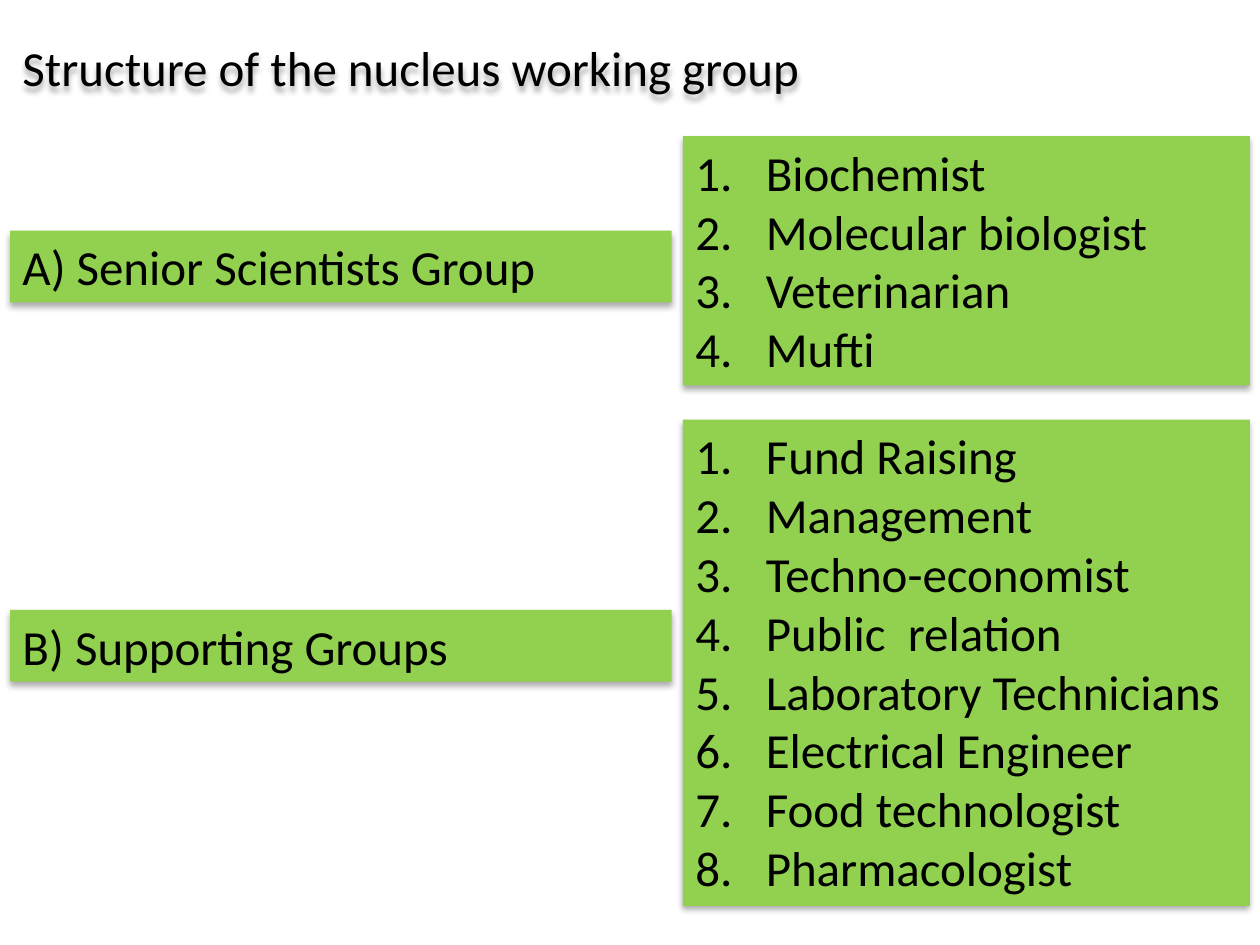
"""Build the slide on the structure of the nucleus working group."""
from lxml import etree
from pptx import Presentation
from pptx import util as u
from pptx.dml.color import RGBColor
from pptx.enum import shapes, text
from pptx.oxml.ns import qn

TITLE = "Structure of the nucleus working group"
GROUPS = [
    {
        "label": "A) Senior Scientists Group",
        "label_top": 1.83,
        "list_top": 1.08,
        "members": ["Biochemist", "Molecular biologist", "Veterinarian", "Mufti"],
    },
    {
        "label": "B) Supporting Groups",
        "label_top": 4.84,
        "list_top": 3.33,
        "members": [
            "Fund Raising", "Management", "Techno-economist", "Public  relation",
            "Laboratory Technicians", "Electrical Engineer", "Food technologist",
            "Pharmacologist",
        ],
    },
]

THEME = {
    "panel": RGBColor.from_string("92D050"),
    "font": {"name": "Calibri", "size": u.Pt(28)},
    "ink": RGBColor.from_string("000000"),
    "shadow": {"blurRad": u.Pt(3.5), "dist": u.Pt(2.2), "dir": 90 * 60000,
               "algn": "tl", "rotWithShape": 0},
    "shadow_color": "000000",
    "shadow_alpha": 32000,
}
FRAME = {
    "word_wrap": True,
    "auto_size": text.MSO_AUTO_SIZE.SHAPE_TO_FIT_TEXT,
    "vertical_anchor": text.MSO_ANCHOR.TOP,
}
LABEL_LEFT, LABEL_WIDTH = 0.08, 5.25
LIST_LEFT, LIST_WIDTH = 5.42, 4.5
TITLE_TOP, TITLE_WIDTH = 0.25, 8.75
LINE_HEIGHT, PADDING = 0.47, 0.1
INDENT = u.Inches(0.56)


def apply(target, values):
    for name, value in values.items():
        setattr(target, name, value)


def add_child(parent, tag, **values):
    return etree.SubElement(parent, qn(tag), {k: str(v) for k, v in values.items()})


def cast_shadow(box):
    box.shadow.inherit = False
    effects = box._element.spPr.find(qn("a:effectLst"))
    shadow = add_child(effects, "a:outerShdw", **THEME["shadow"])
    color = add_child(shadow, "a:srgbClr", val=THEME["shadow_color"])
    add_child(color, "a:alpha", val=THEME["shadow_alpha"])


def number(para):
    properties = para._p.get_or_add_pPr()
    properties.set("marL", str(INDENT))
    properties.set("indent", str(-INDENT))
    add_child(properties, "a:buFont", typeface="+mj-lt")
    add_child(properties, "a:buAutoNum", type="arabicPeriod")


def write(box, lines, alignment, numbered=False):
    apply(box.text_frame, FRAME)
    box.text_frame.text = "\n".join(lines)
    for para in box.text_frame.paragraphs:
        para.alignment = alignment
        if numbered:
            number(para)
        for span in para.runs:
            apply(span.font, THEME["font"])
            span.font.color.rgb = THEME["ink"]


def place(left, top, width, lines):
    height = PADDING + LINE_HEIGHT * len(lines)
    return [u.Inches(length) for length in (left, top, width, height)]


def add_panel(page, left, top, width, lines, alignment, numbered=False):
    box = page.shapes.add_shape(
        shapes.MSO_SHAPE.RECTANGLE, *place(left, top, width, lines))
    box.fill.solid()
    box.fill.fore_color.rgb = THEME["panel"]
    box.line.fill.background()
    cast_shadow(box)
    write(box, lines, alignment, numbered)


def add_title(page):
    box = page.shapes.add_textbox(
        *place(LABEL_LEFT, TITLE_TOP, TITLE_WIDTH, [TITLE]))
    cast_shadow(box)
    write(box, [TITLE], text.PP_ALIGN.JUSTIFY)


def main():
    deck = Presentation()
    apply(deck, {"slide_width": u.Inches(10), "slide_height": u.Inches(7.5)})
    page = deck.slides.add_slide(deck.slide_layouts[6])
    add_title(page)
    for group in GROUPS:
        add_panel(page, LABEL_LEFT, group["label_top"], LABEL_WIDTH,
                  [group["label"]], text.PP_ALIGN.LEFT)
        add_panel(page, LIST_LEFT, group["list_top"], LIST_WIDTH,
                  group["members"], text.PP_ALIGN.JUSTIFY, numbered=True)
    deck.save("out.pptx")


if __name__ == "__main__":
    main()
